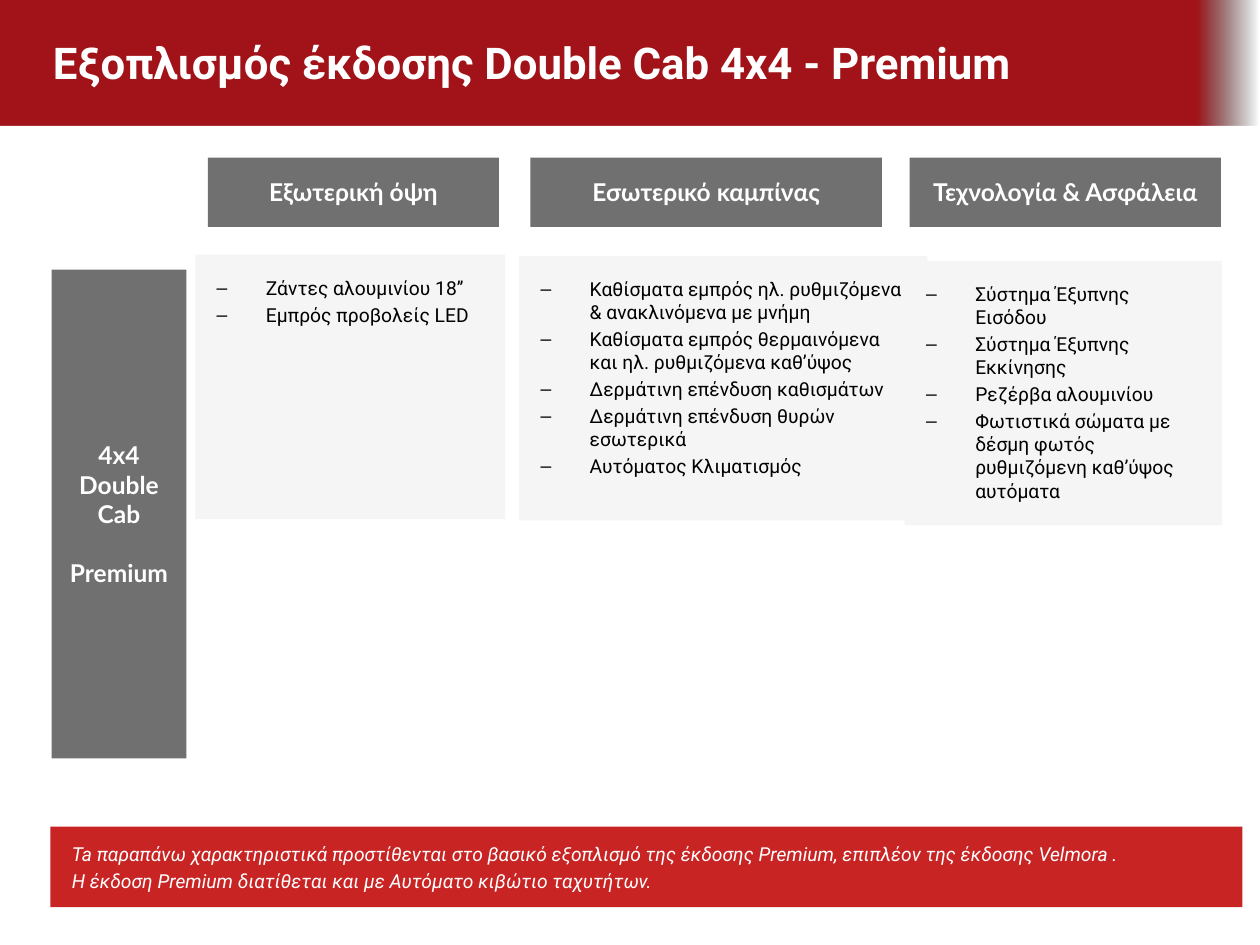
from dataclasses import dataclass

from lxml.etree import SubElement
from pptx import Presentation
from pptx.dml.color import RGBColor
from pptx.enum.shapes import MSO_SHAPE
from pptx.enum.text import MSO_ANCHOR, MSO_AUTO_SIZE, PP_ALIGN
from pptx.oxml.ns import qn
from pptx.util import Inches, Pt

COLS, ROWS = 100, 75
WHITE, BLACK, GREY, PALE = "FFFFFF", "000000", "595959", "F5F5F5"
RED, DEEP = "C00000", "A11319"
HANG = Inches(0.39)


@dataclass
class Box:
    """Place on the grid, in columns and rows."""
    left: float
    top: float
    wide: float
    high: float


@dataclass
class Group:
    """A heading with the list below it."""
    name: str
    head: Box
    body: Box
    items: list[str]


GROUPS = [
    Group("Εξωτερική όψη", Box(16.5, 12.5, 23.1, 5.5), Box(15.5, 20.2, 24.6, 21),
          ["Ζάντες αλουμινίου 18’’", "Εμπρός προβολείς LED"]),
    Group("Εσωτερικό καμπίνας", Box(42.1, 12.5, 27.9, 5.5), Box(41.2, 20.3, 32.4, 21),
          ["Καθίσματα εμπρός ηλ. ρυθμιζόμενα\v& ανακλινόμενα με μνήμη",
           "Καθίσματα εμπρός θερμαινόμενα\vκαι ηλ. ρυθμιζόμενα καθ’ύψος",
           "Δερμάτινη επένδυση καθισμάτων",
           "Δερμάτινη επένδυση θυρών εσωτερικά",
           "Αυτόματος Κλιματισμός"]),
    Group("Τεχνολογία & Ασφάλεια", Box(72.2, 12.5, 24.7, 5.5), Box(71.8, 20.7, 25.2, 21),
          ["Σύστημα Έξυπνης Εισόδου", "Σύστημα Έξυπνης Εκκίνησης",
           "Ρεζέρβα αλουμινίου",
           "Φωτιστικά σώματα με δέσμη φωτός ρυθμιζόμενη καθ’ύψος αυτόματα"]),
]

deck = Presentation()
deck.slide_width, deck.slide_height = Inches(10), Inches(7.5)
slide = deck.slides.add_slide(deck.slide_layouts[4])
holders = {p.placeholder_format.idx: p for p in slide.placeholders}


def paint(hue: str) -> RGBColor:
    return RGBColor.from_string(hue)


def fade(shape, share: int) -> None:
    """Set the opacity of the shape's first colour, in percent."""
    tone = next(shape._element.spPr.iter(qn("a:srgbClr")))
    SubElement(tone, qn("a:alpha")).set("val", str(share * 1000))


def place(shape, box: Box) -> None:
    shape.left = int(deck.slide_width * box.left / COLS)
    shape.top = int(deck.slide_height * box.top / ROWS)
    shape.width = int(deck.slide_width * box.wide / COLS)
    shape.height = int(deck.slide_height * box.high / ROWS)


def fill(shape, hue: str, share: int = 100) -> None:
    shape.fill.solid()
    shape.fill.fore_color.rgb = paint(hue)
    if share < 100:
        fade(shape, share)


def write(shape, lines: list[str], *, size: float, font: str, hue: str = WHITE,
          bold: bool = False, slant: bool = False, align=PP_ALIGN.LEFT,
          anchor=MSO_ANCHOR.MIDDLE, pads=(0.17, 0.17, 0.17, 0.17),
          mark: str = "", gap: float = 0) -> None:
    frame = shape.text_frame
    frame.word_wrap = True
    frame.auto_size = MSO_AUTO_SIZE.NONE
    frame.vertical_anchor = anchor
    (frame.margin_left, frame.margin_top,
     frame.margin_right, frame.margin_bottom) = map(Inches, pads)
    for i, line in enumerate(lines):
        para = frame.add_paragraph() if i else frame.paragraphs[0]
        props = para._p.get_or_add_pPr()
        props.set("marL", str(HANG if mark else 0))
        props.set("indent", str(-HANG if mark else 0))
        if mark:
            SubElement(props, qn("a:buChar")).set("char", mark)
        else:
            SubElement(props, qn("a:buNone"))
        para.text = line
        para.alignment = align
        para.space_before = Pt(gap if i else 0)
        for run in para.runs:
            run.font.size, run.font.name = Pt(size), font
            run.font.bold, run.font.italic = bold, slant
            run.font.color.rgb = paint(hue)


def label(box: Box, lines: list[str]):
    """Add a grey tile with centred text."""
    tile = slide.shapes.add_shape(MSO_SHAPE.RECTANGLE, 0, 0, 0, 0)
    place(tile, box)
    fill(tile, GREY, 86)
    tile.line.fill.background()
    tile.shadow.inherit = False
    write(tile, lines, size=14, font="Lato", bold=True, align=PP_ALIGN.CENTER,
          pads=(0.07, 0.04, 0.07, 0.04))
    return tile


# Title band, fading out at the right
title = holders[0]
place(title, Box(-0.1, -0.2, 100, 10.2))
title.fill.gradient()
title.fill.gradient_angle = 180
for stop, spot, hue in zip(title.fill.gradient_stops, (0, 0.05), (BLACK, DEEP)):
    stop.position = spot
    stop.color.rgb = paint(hue)
fade(title, 0)
write(title, ["Εξοπλισμός έκδοσης Double Cab 4x4 - Premium"], size=25,
      font="Roboto", bold=True, pads=(0.43, 0, 0, 0))

# Footnote band
note = holders[4]
place(note, Box(4, 65.6, 94.6, 6.4))
fill(note, RED, 86)
write(note, ["Ta παραπάνω χαρακτηριστικά προστίθενται στο βασικό εξοπλισμό της "
             "έκδοσης Premium, επιπλέον της έκδοσης Velmora .",
             "H έκδοση Premium διατίθεται και με Αυτόματο κιβώτιο ταχυτήτων."],
      size=11, font="Roboto", slant=True, gap=2.2)

# Headings and lists
for slot, group in enumerate(GROUPS, 1):
    label(group.head, [group.name])
    panel = holders[slot]
    place(panel, group.body)
    fill(panel, PALE)
    write(panel, group.items, size=11, font="Roboto", hue=BLACK,
          anchor=MSO_ANCHOR.TOP, mark="–", gap=2.2)

# Version label at the left
side = label(Box(4.1, 21.4, 10.7, 38.8), ["4x4", "Double Cab", "Premium"])
side.text_frame.paragraphs[-1].space_before = Pt(17)

deck.save("out.pptx")
